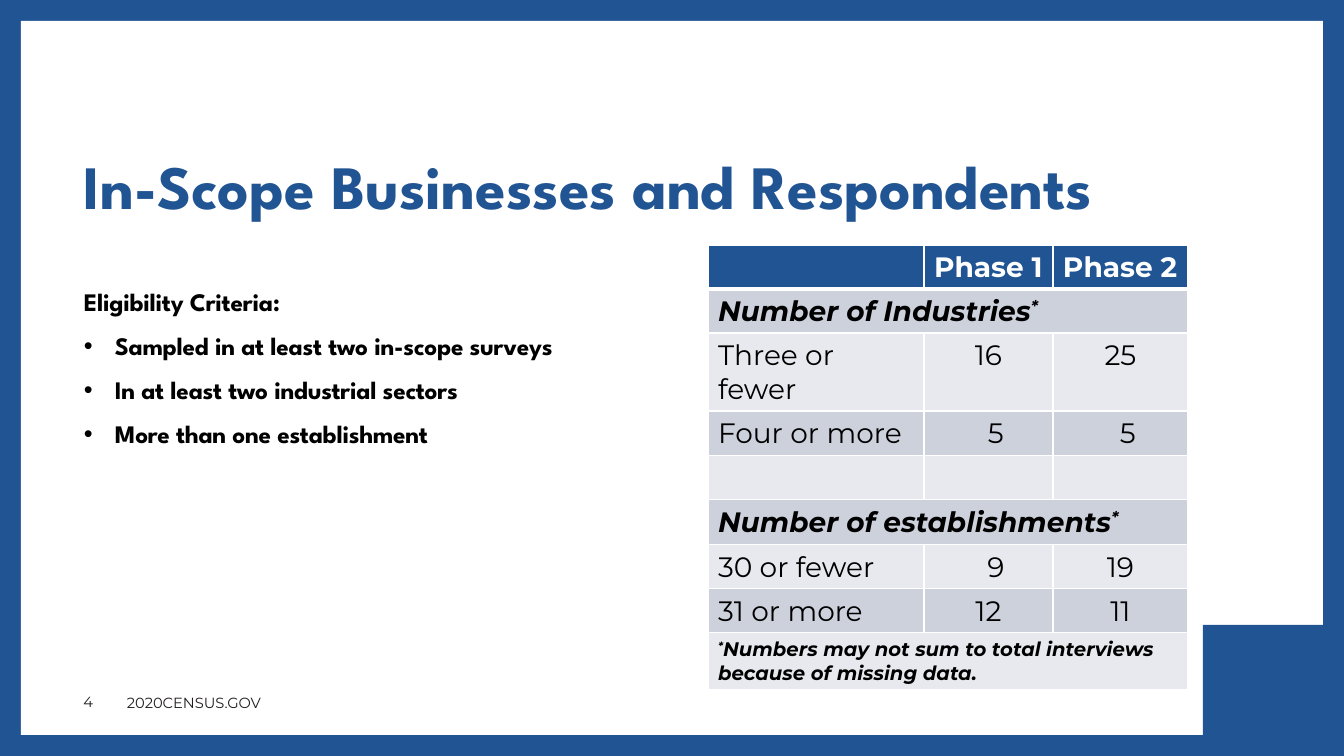
from lxml.etree import SubElement
from pptx import Presentation
from pptx.dml.color import RGBColor
from pptx.enum.shapes import MSO_SHAPE
from pptx.enum.text import MSO_ANCHOR, PP_ALIGN
from pptx.oxml.ns import qn
from pptx.util import Emu, Pt

BLUE, WHITE, BLACK, INK = "205493", "FFFFFF", "000000", "231F20"
DARK_BAND, LIGHT_BAND = "CDD1DC", "E8E9EE"
HEADING, BODY = "League Spartan", "Montserrat"


def px(n):
    return Emu(round(n * 914400 / 100.8))


def add_run(p, text, size, font, color, bold=False, italic=False):
    r = p.add_run()
    r.text = text
    r.font.size = Pt(size)
    r.font.name = font
    r.font.bold = bold
    r.font.italic = italic
    r.font.color.rgb = RGBColor.from_string(color)
    return r


prs = Presentation()
prs.slide_width, prs.slide_height = px(1344), px(756)
s = prs.slides.add_slide(prs.slide_layouts[6])
s.background.fill.solid()
s.background.fill.fore_color.rgb = RGBColor.from_string(BLUE)

for box, color in [((21, 21, 1302, 714), WHITE), ((1203, 625, 141, 131), BLUE)]:
    sp = s.shapes.add_shape(MSO_SHAPE.RECTANGLE, *map(px, box))
    sp.shadow.inherit = False
    sp.fill.solid()
    sp.fill.fore_color.rgb = RGBColor.from_string(color)
    sp.line.fill.background()

criteria = [
    "Eligibility Criteria:",
    "Sampled in at least two in-scope surveys",
    "In at least two industrial sectors",
    "More than one establishment",
]
LEFT, RIGHT = PP_ALIGN.LEFT, PP_ALIGN.RIGHT
TOP, MIDDLE, BOTTOM = MSO_ANCHOR.TOP, MSO_ANCHOR.MIDDLE, MSO_ANCHOR.BOTTOM
texts = [
    ((117, 689, 162, 28), TOP, LEFT, False, 1, 0, 10.5, BODY, INK, False, ["2020CENSUS.GOV"]),
    ((74, 82, 1180, 146), BOTTOM, LEFT, True, 0.9, 0, 44, HEADING, "215493", True,
     ["In-Scope Businesses and Respondents"]),
    ((74, 281, 545, 333), TOP, LEFT, True, 1, -20, 18, HEADING, BLACK, True, criteria),
    ((35, 682, 68, 40), MIDDLE, RIGHT, True, 1, 0, 10.5, BODY, INK, False, ["4"]),
]
for box, anchor, align, wrap, spacing, tracking, size, font, color, bold, lines in texts:
    tf = s.shapes.add_textbox(*map(px, box)).text_frame
    tf.word_wrap = wrap
    tf.vertical_anchor = anchor
    for i, line in enumerate(lines):
        p = tf.paragraphs[0] if i == 0 else tf.add_paragraph()
        p.alignment = align
        p.line_spacing = spacing
        if i:
            p.space_before = Pt(10)
            pPr = p._p.get_or_add_pPr()
            pPr.set("marL", str(px(31)))
            pPr.set("indent", str(-px(31)))
            SubElement(pPr, qn("a:buFont"), typeface="Arial")
            SubElement(pPr, qn("a:buChar"), char="•")
        r = add_run(p, line, size, font, color, bold)
        if tracking:
            r.font._element.set("spc", str(tracking))

rows = [
    ("", "Phase 1", "Phase 2"),
    ("Number of Industries*",),
    ("Three or fewer", "16", "25"),
    ("Four or more", "5", "5"),
    ("", "", ""),
    ("Number of establishments*",),
    ("30 or fewer", "9", "19"),
    ("31 or more", "12", "11"),
    ("*Numbers may not sum to total interviews because of missing data.",),
]
heights = [44, 44, 78, 45, 44, 45, 44, 44, 57]
widths = [216, 129, 135]
frame = s.shapes.add_table(len(rows), 3, px(708), px(245), px(sum(widths)), px(sum(heights)))
table = frame.table
table.first_row = False
table.horz_banding = False
for col, width in zip(table.columns, widths):
    col.width = px(width)

for i, (values, height) in enumerate(zip(rows, heights)):
    table.rows[i].height = px(height)
    header, spanning = i == 0, len(values) == 1
    size = 14 if i == len(rows) - 1 else 20
    fill = BLUE if header else DARK_BAND if i % 2 else LIGHT_BAND
    if spanning:
        table.cell(i, 0).merge(table.cell(i, 2))
    for j in range(3):
        cell = table.cell(i, j)
        tcPr = cell._tc.get_or_add_tcPr()
        for side in ("L", "R", "T", "B"):
            thick = (header and side == "B") or (i == 1 and side == "T")
            ln = SubElement(tcPr, qn("a:ln" + side), w=str(Pt(3 if thick else 1)))
            SubElement(SubElement(ln, qn("a:solidFill")), qn("a:srgbClr"), val=WHITE)
        cell.fill.solid()
        cell.fill.fore_color.rgb = RGBColor.from_string(fill)
    for j, value in enumerate(values):
        cell = table.cell(i, j)
        p = cell.text_frame.paragraphs[0]
        if j and not header:
            p.alignment = PP_ALIGN.CENTER
            if len(value) == 1:
                cell.margin_left = px(25)
        before, star, after = value.partition("*")
        for part in filter(None, (before, star, after)):
            r = add_run(p, part, size, BODY, WHITE if header else BLACK, header or spanning, spanning)
            if part == "*":
                r.font._element.set("baseline", "30000")

prs.save("out.pptx")
